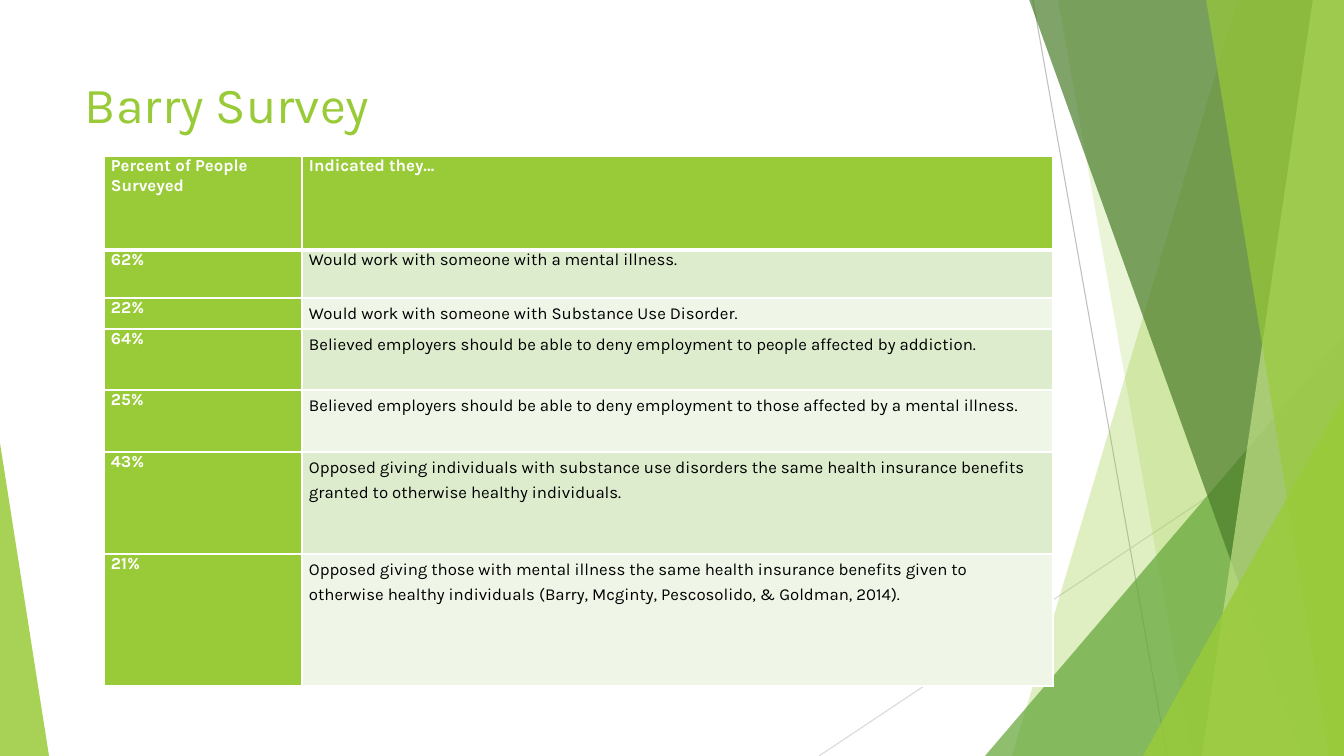
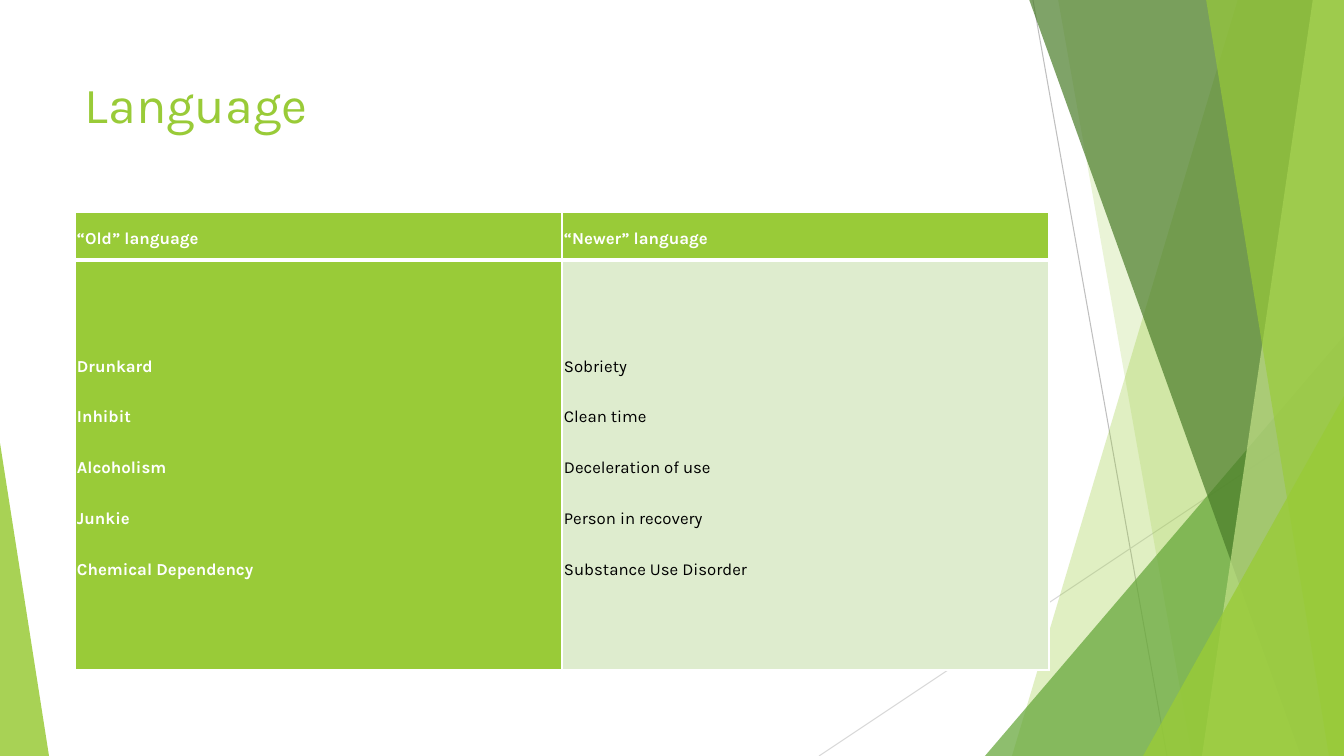
from lxml.etree import SubElement
from pptx import Presentation
from pptx.dml.color import RGBColor as Rgb
from pptx.enum.shapes import MSO_CONNECTOR as Connector, MSO_SHAPE as Preset
from pptx.enum.text import MSO_ANCHOR as Anchor
from pptx.oxml.ns import qn
from pptx.util import Pt

SCALE = 914400 / 100.8  # EMU in one px
WIDTH, HEIGHT = 1344, 756
FONT = "Karla"
COLORS = {
    "lime": "99CB38", "green": "63A537", "forest": "4A7C29", "pale": "C2E088",
    "band": "DEECCE", "light": "EFF6E8", "white": "FFFFFF", "black": "000000",
    "gray": "BFBFBF", "silver": "D9D9D9",
}


def px(*lengths):
    return [round(length * SCALE) for length in lengths]


def add_span(para, text, size, color, bold=False):
    span = para.add_run()
    span.text = text
    span.font.name = FONT
    span.font.size = Pt(size)
    span.font.bold = bold
    span.font.color.rgb = Rgb.from_string(COLORS[color])


deck = Presentation()
deck.slide_width, deck.slide_height = px(WIDTH, HEIGHT)
blank = deck.slide_layouts[6]
for placeholder in list(blank.placeholders):
    blank.shapes.element.remove(placeholder.element)

# Shared decoration: drawn on the first page, then moved to the layout
first_page = deck.slides.add_slide(blank)
shapes = first_page.shapes

for ends, color in [((1033, 0, 1167, HEIGHT), "gray"),
                    ((WIDTH, 406, 819, HEIGHT), "silver")]:
    line = shapes.add_connector(Connector.STRAIGHT, *px(*ends))
    line.line.color.rgb = Rgb.from_string(COLORS[color])
    line.line.width = Pt(0.75)
    SubElement(line.element.spPr, qn("a:effectLst"))

# Bands run from (top x) to (bottom x) and reach the right edge;
# triangles have a box and the place of their tip
facets = [
    ("band", (1238, 1012), None, "lime", 30),
    ("band", (1058, 1192), None, "lime", 20),
    ("triangle", (985, 336, 359, 420), 1, "green", 72),
    ("band", (1029, 1301), None, "forest", 70),
    ("band", (1313, 1202), None, "pale", 70),
    ("band", (1206, 1329), None, "lime", 65),
    ("triangle", (1143, 396, 201, 360), 1, "lime", 80),
    ("triangle", (0, 443, 49, 313), 0, "lime", 85),
]
for kind, place, tip, color, opacity in facets:
    if kind == "triangle":
        facet = shapes.add_shape(Preset.ISOSCELES_TRIANGLE, *px(*place))
        facet.adjustments[0] = tip
    else:
        top_x, bottom_x = place
        outline = shapes.build_freeform(*px(top_x, -1))
        corners = [(WIDTH, -1), (WIDTH, HEIGHT), (bottom_x, HEIGHT)]
        outline.add_line_segments([px(*corner) for corner in corners])
        facet = outline.convert_to_shape()
    facet.shadow.inherit = False
    facet.line.fill.background()
    facet.fill.solid()
    facet.fill.fore_color.rgb = Rgb.from_string(COLORS[color])
    tint = facet.element.spPr.find(".//" + qn("a:srgbClr"))
    SubElement(tint, qn("a:alpha"), val=str(opacity * 1000))

for shape in list(shapes):
    blank.shapes.element.append(shape.element)

# Page contents; each row is: height, paragraphs per column, leading per column
survey = {
    "title": "Barry Survey", "title_height": 79,
    "place": (104, 156), "columns": (198, 751),
    "insets": (7, 0), "anchor": Anchor.TOP, "gap": 0,
    "rows": [
        (94, (["Percent of People Surveyed"], ["Indicated they…"]), (1, 1)),
        (48, (["62%"], ["Would work with someone with a mental illness."]), (1, 1)),
        (31, (["22%"], ["Would work with someone with Substance Use Disorder."]), (1, 1.3)),
        (61, (["64%"], ["Believed employers should be able to deny employment "
                        "to people affected by addiction."]), (1, 1.3)),
        (62, (["25%"], ["Believed employers should be able to deny employment "
                        "to those affected by a mental illness."]), (1, 1.3)),
        (102, (["43%"], ["Opposed giving individuals with substance use disorders "
                         "the same health insurance benefits granted to otherwise "
                         "healthy individuals."]), (1, 1.3)),
        (132, (["21%"], ["Opposed giving those with mental illness the same health "
                         "insurance benefits given to otherwise healthy individuals "
                         "(Barry, Mcginty, Pescosolido, & Goldman, 2014)."]), (1, 1.3)),
    ],
}
language = {
    "title": "Language", "title_height": 145,
    "place": (75, 212), "columns": (487, 487),
    "insets": (2, 2), "anchor": Anchor.MIDDLE, "gap": 9,
    "rows": [
        (48, (["“Old” language"], ["“Newer” language"]), (1.3, 1.3)),
        (410, (["Drunkard", "Inhibit", "Alcoholism", "Junkie", "Chemical Dependency"],
               ["Sobriety", "Clean time", "Deceleration of use",
                "Person in recovery", "Substance Use Disorder"]), (1.3, 1.3)),
    ],
}

for content in (survey, language):
    page = first_page if content is survey else deck.slides.add_slide(blank)

    # Title
    box = page.shapes.add_textbox(*px(75, 68, 948, content["title_height"]))
    box.text_frame.word_wrap = True
    add_span(box.text_frame.paragraphs[0], content["title"], 36, "lime")

    # Table
    rows, columns = content["rows"], content["columns"]
    size = sum(columns), sum(row[0] for row in rows)
    frame = page.shapes.add_table(len(rows), len(columns), *px(*content["place"], *size))
    table = frame.table
    for column, width in zip(table.columns, columns):
        column.width = px(width)[0]
    side, edge = px(*content["insets"])

    for r, (height, texts, leadings) in enumerate(rows):
        table.rows[r].height = px(height)[0]
        for c, (lines, leading) in enumerate(zip(texts, leadings)):
            cell = table.cell(r, c)
            cell.margin_left = cell.margin_right = side
            cell.margin_top = cell.margin_bottom = edge
            cell.vertical_anchor = content["anchor"]

            # White borders, thicker under the header
            props = cell._tc.get_or_add_tcPr()
            for tag in ("lnL", "lnR", "lnT", "lnB"):
                weight = 3 if r == 0 and tag == "lnB" else 1
                border = SubElement(props, qn("a:" + tag), w=str(Pt(weight)))
                paint = SubElement(border, qn("a:solidFill"))
                SubElement(paint, qn("a:srgbClr"), val=COLORS["white"])

            # Green header row and first column, banded body
            strong = r == 0 or c == 0
            fill = "lime" if strong else "band" if r % 2 else "light"
            cell.fill.solid()
            cell.fill.fore_color.rgb = Rgb.from_string(COLORS[fill])

            for i, text in enumerate(lines):
                text_frame = cell.text_frame
                para = text_frame.add_paragraph() if i else text_frame.paragraphs[0]
                para.line_spacing = float(leading)
                para.space_before = para.space_after = Pt(content["gap"])
                add_span(para, text, 12, "white" if strong else "black", strong)

deck.save("out.pptx")
